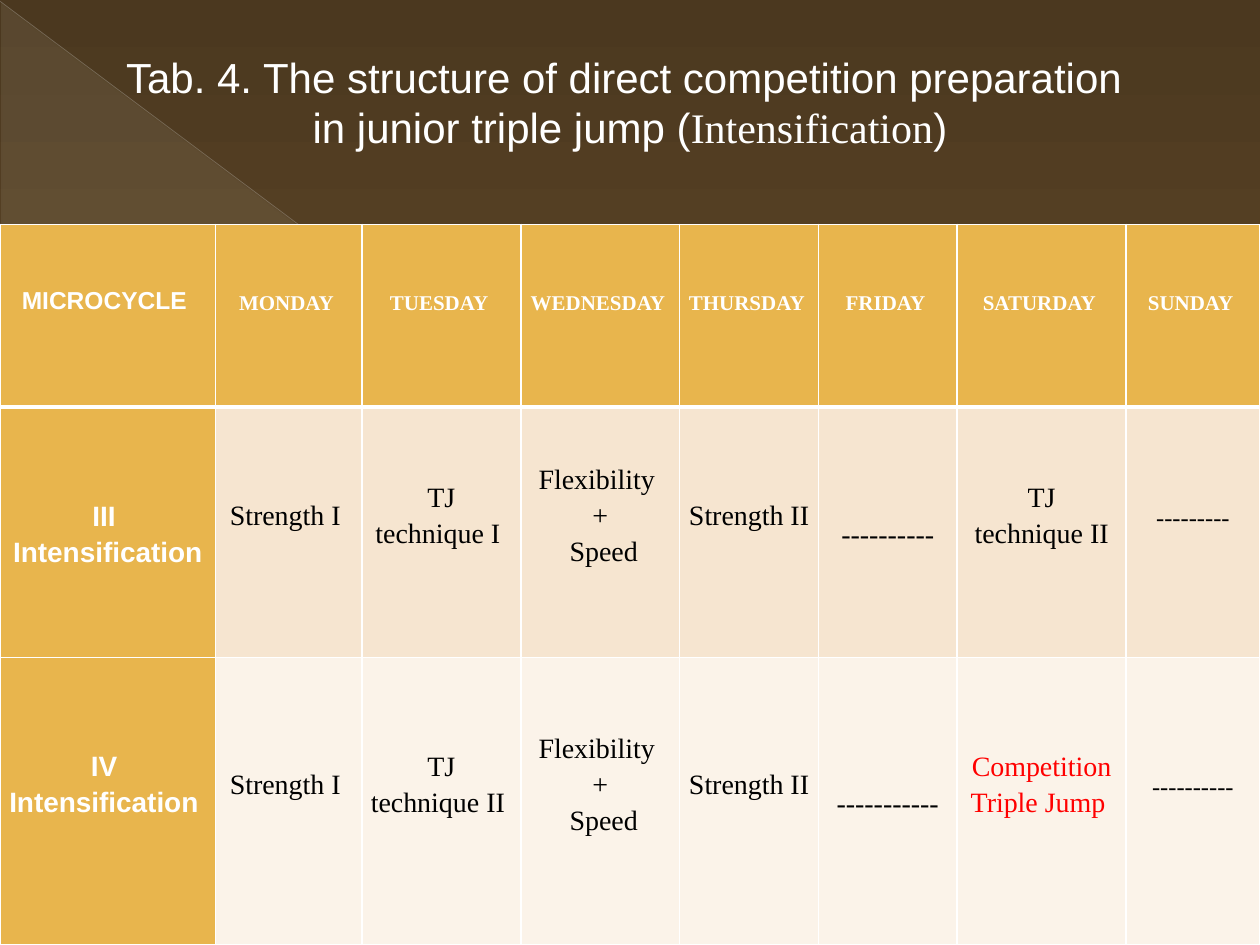
from lxml import etree
from pptx import Presentation
from pptx.dml.color import RGBColor
from pptx.enum.shapes import MSO_CONNECTOR, MSO_SHAPE
from pptx.enum.text import MSO_ANCHOR, PP_ALIGN
from pptx.oxml.ns import qn
from pptx.util import Inches, Pt

CENTER, MIDDLE = PP_ALIGN.CENTER, MSO_ANCHOR.MIDDLE
TRIANGLE, STRAIGHT = MSO_SHAPE.RIGHT_TRIANGLE, MSO_CONNECTOR.STRAIGHT
W, H = 10, 7.5
SANS, SERIF = "Arial", "Times New Roman"
WHITE, BLACK, RED, GOLD = "FFFFFF", "000000", "FF0000", "E8B54D"
ROW_FILLS = [GOLD, "F6E5D0", "FBF3E9"]
COLS = [1.71, 1.16, 1.26, 1.26, 1.1, 1.1, 1.34, 1.06]
ROWS = [1.45, 1.99, 2.28]
LINE_SPACING = 1.15

# Lines of each cell
FLEX = ["Flexibility ", "+", " Speed"]
DAYS = ["MONDAY", "TUESDAY", "WEDNESDAY", "THURSDAY", "FRIDAY", "SATURDAY", "SUNDAY"]
CELLS = [
    [["MICROCYCLE "]] + [[day + " "] for day in DAYS],
    [["III ", "Intensification"], ["Strength I "], ["TJ", "technique I "], FLEX,
     ["Strength II "], ["-" * 10], ["TJ", "technique II"], ["-" * 9]],
    [["IV ", "Intensification "], ["Strength I "], ["TJ", "technique II "], FLEX,
     ["Strength II "], ["-" * 11], ["Competition", "Triple Jump "], ["-" * 10]],
]
NOT_RAISED = [(1, 0), (1, 5), (2, 5)]  # cells whose text sits at the exact middle


def rgb(value):
    return RGBColor.from_string(value)


def add_text(p, text, size=16, font=SERIF, color=BLACK, bold=False):
    r = p.add_run()
    r.text = text
    r.font.size, r.font.name, r.font.bold = Pt(size), font, bold
    r.font.color.rgb = rgb(color)


def add_color(parent, color, opacity=100):
    clr = etree.SubElement(parent, qn("a:srgbClr"), val=color)
    if opacity < 100:
        etree.SubElement(clr, qn("a:alpha"), val=str(opacity * 1000))


def set_gradient(fill, element, stops, angle):
    """Stops are (percent, colour, opacity); the angle runs clockwise."""
    fill.gradient()
    fill.gradient_angle = 360 - angle
    stop_list = element.find(".//" + qn("a:gsLst"))
    for old in list(stop_list):
        stop_list.remove(old)
    for pos, color, opacity in stops:
        add_color(etree.SubElement(stop_list, qn("a:gs"), pos=str(pos * 1000)),
                  color, opacity)


def add_faint_line(s, start, end, color, width, opacity):
    line = s.shapes.add_connector(STRAIGHT, *map(Inches, start + end))
    line.line.width = Pt(width)
    line.line.color.rgb = rgb(color)
    clr = line.element.find(".//" + qn("a:ln")).find(".//" + qn("a:srgbClr"))
    etree.SubElement(clr, qn("a:alpha"), val=str(opacity * 1000))
    etree.SubElement(line.element.spPr, qn("a:effectLst"))


def add_backdrop(s, w, h):
    set_gradient(s.background.fill, s.element,
                 [(0, "4B381F", 100), (60, "634B2A", 100), (100, "948069", 100)], 90)
    sp = s.shapes.add_shape(TRIANGLE, Inches(0.01), Inches(0.02),
                            Inches(w - 0.02), Inches(h - 0.02))
    sp.shadow.inherit = False
    sp.line.fill.background()
    set_gradient(sp.fill, sp.element,
                 [(0, "ECEDD1", 10), (70, "ECEDD1", 8), (100, "ECEDD1", 1)], 133)
    add_faint_line(s, (0, 0.01), (w, h - 0.01), "BEBAB5", 0.39, 35)
    add_faint_line(s, (w, 5.41), (7.07, h - 0.01), "C5C2BE", 0.47, 45)


def set_borders(cell, **widths):
    tc_pr = cell._tc.get_or_add_tcPr()
    for i, side in enumerate("LRTB"):
        ln = etree.Element(qn("a:ln" + side), w=str(Pt(widths.get(side, 1))))
        add_color(etree.SubElement(ln, qn("a:solidFill")), WHITE)
        tc_pr.insert(i, ln)


def cell_format(row, col):
    if row == 0:
        size, font = (14, SANS) if col == 0 else (12, SERIF)
        return dict(size=size, font=font, color=WHITE, bold=True)
    if col == 0:
        return dict(font=SANS, color=WHITE, bold=True)
    if col == 7:
        return dict(size=14)
    return dict(color=RED if (row, col) == (2, 6) else BLACK)


def fill_cell(cell, row, col):
    fmt = cell_format(row, col)
    cell.fill.solid()
    cell.fill.fore_color.rgb = rgb(GOLD if col == 0 else ROW_FILLS[row])
    cell.vertical_anchor = MIDDLE
    cell.margin_left = cell.margin_right = Inches(0.07)
    cell.margin_top = cell.margin_bottom = 0
    if (row, col) not in NOT_RAISED:
        cell.margin_bottom = Pt(fmt.get("size", 16) * LINE_SPACING * 1.15)
    tf = cell.text_frame
    for i, text in enumerate(CELLS[row][col]):
        p = tf.add_paragraph() if i else tf.paragraphs[0]
        p.alignment, p.line_spacing = CENTER, LINE_SPACING
        add_text(p, text, **fmt)
    set_borders(cell, **({"B": 3} if row == 0 else {"T": 3} if row == 1 else {}))


def add_schedule(s, x, y, w, h):
    table = s.shapes.add_table(len(ROWS), len(COLS), Inches(x), Inches(y),
                               Inches(w), Inches(h)).table
    for column, share in zip(table.columns, COLS):
        column.width = Inches(w * share / sum(COLS))
    for row, share in zip(table.rows, ROWS):
        row.height = Inches(h * share / sum(ROWS))
    for r in range(len(ROWS)):
        for c in range(len(COLS)):
            fill_cell(table.cell(r, c), r, c)


def add_title(s, x, y, w, h):
    tf = s.shapes.add_textbox(Inches(x), Inches(y), Inches(w), Inches(h)).text_frame
    tf.word_wrap = True
    p = tf.paragraphs[0]
    p.alignment = CENTER
    fmt = dict(size=24, color=WHITE)
    add_text(p, "Tab. 4. The structure of direct competition preparation ", font=SANS, **fmt)
    p.add_line_break()
    add_text(p, "in junior triple jump (", font=SANS, **fmt)
    add_text(p, "Intensification", **fmt)
    add_text(p, ")", font=SANS, **fmt)


def main():
    prs = Presentation()
    prs.slide_width, prs.slide_height = Inches(W), Inches(H)
    s = prs.slides.add_slide(prs.slide_layouts[6])
    add_backdrop(s, W, H)
    add_schedule(s, 0, 1.78, W, H - 1.78)
    add_title(s, 0, 0.36, W, 0.91)
    prs.save("out.pptx")


if __name__ == "__main__":
    main()
